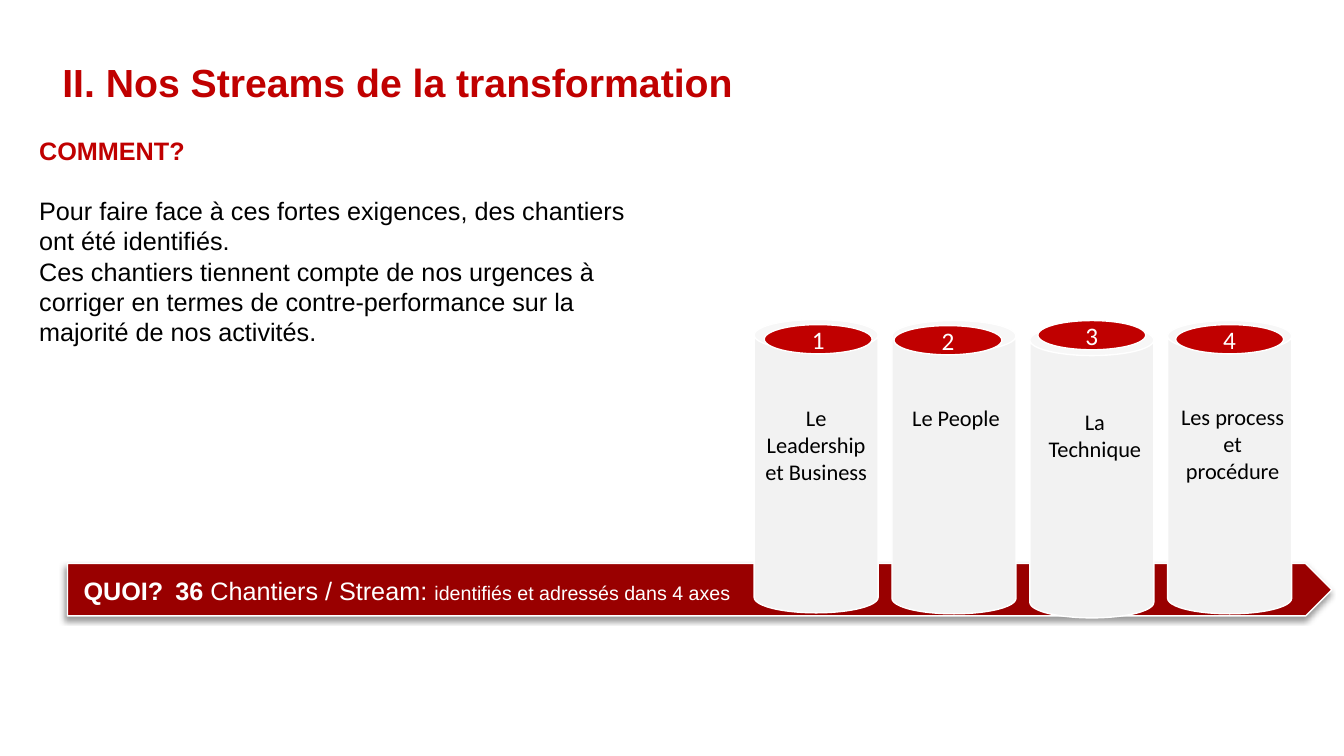
from lxml import etree
from pptx import Presentation
from pptx.dml.color import RGBColor
from pptx.enum import shapes, text
from pptx.oxml import ns
from pptx.util import Inches, Pt

COLORS = {
    "red": "C00000",
    "dark red": "990000",
    "pale grey": "F2F2F2",
    "white": "FFFFFF",
    "black": "000000",
}
PILLAR_WIDTH, PILLAR_HEIGHT = 1.23, 2.91
PILLAR_LEFT, PILLAR_TOP, PILLAR_STEP = 7.48, 3.18, 1.367
# label, cylinder shift down, cap (dx, dy), label box (dx, dy, width, height)
PILLARS = [
    ("Le Leadership et Business", -0.01, (0.10, 0.04), (0, 0.78, 1.23, 1.21)),
    ("Le People", 0, (0.02, 0.05), (0.10, 0.78, 1.07, 0.94)),
    ("La Technique", 0.04, (0.08, 0), (0.03, 0.82, 1.23, 0.94)),
    ("Les process et procédure", 0, (0.08, 0.04), (0.03, 0.77, 1.23, 1.21)),
]


def rgb(name):
    return RGBColor.from_string(COLORS[name])


def add_run(paragraph, words, size=18, font="Arial", color="black", bold=False):
    run = paragraph.add_run()
    run.text = words
    run.font.size = Pt(size)
    run.font.name = font
    run.font.bold = bold
    run.font.color.rgb = rgb(color)


def add_text(parent, box, words, align=None, anchor=text.MSO_ANCHOR.TOP, **style):
    """Add a wrapping text box and return its text frame."""
    frame = parent.add_textbox(*map(Inches, box)).text_frame
    frame.word_wrap = True
    frame.vertical_anchor = anchor
    frame.paragraphs[0].alignment = align
    add_run(frame.paragraphs[0], words, **style)
    return frame


def add_filled(parent, preset, box, fill):
    shape = parent.add_shape(preset, *map(Inches, box))
    shape.shadow.inherit = False
    shape.fill.solid()
    shape.fill.fore_color.rgb = rgb(fill)
    shape.line.color.rgb = rgb("white")
    shape.line.width = Pt(1)
    return shape


def add_shadow(shape):
    """Cast a soft shadow down and to the left."""
    effects = shape._element.spPr.find(ns.qn("a:effectLst"))
    shadow = etree.SubElement(
        effects, ns.qn("a:outerShdw"), blurRad=str(Pt(4)), dist=str(Pt(3)),
        dir=str(135 * 60000), algn="tr", rotWithShape="0")
    color = etree.SubElement(shadow, ns.qn("a:srgbClr"), val=COLORS["black"])
    etree.SubElement(color, ns.qn("a:alpha"), val="40000")


def add_title(slide, box):
    title = add_text(slide.shapes, box, "II. Nos Streams de la transformation",
                     anchor=text.MSO_ANCHOR.MIDDLE, size=28, color="red", bold=True)
    title.paragraphs[0].line_spacing = 2.5


def add_how(slide, box):
    how = add_text(slide.shapes, box, "COMMENT?", color="red", bold=True)
    reasons = [
        "Pour faire face à ces fortes exigences, des chantiers ont été identifiés.",
        "Ces chantiers tiennent compte de nos urgences à corriger en termes de "
        "contre-performance sur la majorité de nos activités.",
    ]
    for reason in reasons:
        add_run(how.add_paragraph(), reason)
    how.paragraphs[1].space_before = Pt(21.6)


def add_banner(slide, box):
    banner = add_filled(slide.shapes, shapes.MSO_SHAPE.PENTAGON, box, "dark red")
    add_shadow(banner)


def add_banner_text(slide, box):
    left, top = box[0], box[1] + 0.07
    add_text(slide.shapes, (left + 0.06, top, 1.01, 0.4), "QUOI?",
             color="white", bold=True)
    what = add_text(slide.shapes, (left + 0.97, top, 6.09, 0.4), "36",
                    color="white", bold=True)
    add_run(what.paragraphs[0], " Chantiers / Stream: ", color="white")
    add_run(what.paragraphs[0], "identifiés et adressés dans 4 axes",
            size=14, color="white")


def add_pillar(slide, left, top, number, label, shift, cap_offset, label_box):
    pillar = slide.shapes.add_group_shape().shapes
    add_filled(pillar, shapes.MSO_SHAPE.CAN,
               (left, top + shift, PILLAR_WIDTH, PILLAR_HEIGHT), "pale grey")
    dx, dy = cap_offset
    cap = add_filled(pillar, shapes.MSO_SHAPE.OVAL,
                     (left + dx, top + dy, 1.07, 0.29), "red")
    cap.text_frame.vertical_anchor = text.MSO_ANCHOR.MIDDLE
    digit = cap.text_frame.paragraphs[0]
    digit.alignment = text.PP_ALIGN.CENTER
    add_run(digit, str(number), font="Calibri", color="white")
    dx, dy, width, height = label_box
    add_text(pillar, (left + dx, top + dy, width, height), label,
             align=text.PP_ALIGN.CENTER, size=16, font="Calibri")


def main():
    deck = Presentation()
    deck.slide_width, deck.slide_height = Inches(13.33), Inches(7.5)
    slide = deck.slides.add_slide(deck.slide_layouts[6])
    banner_box = (0.67, 5.59, 12.54, 0.52)
    add_title(slide, (0.52, 0.08, 11.91, 0.76))
    add_how(slide, (0.29, 1.29, 6.12, 2.52))
    add_banner(slide, banner_box)
    for index, pillar in enumerate(PILLARS):
        add_pillar(slide, PILLAR_LEFT + index * PILLAR_STEP, PILLAR_TOP,
                   index + 1, *pillar)
    add_banner_text(slide, banner_box)
    deck.save("out.pptx")


if __name__ == "__main__":
    main()
